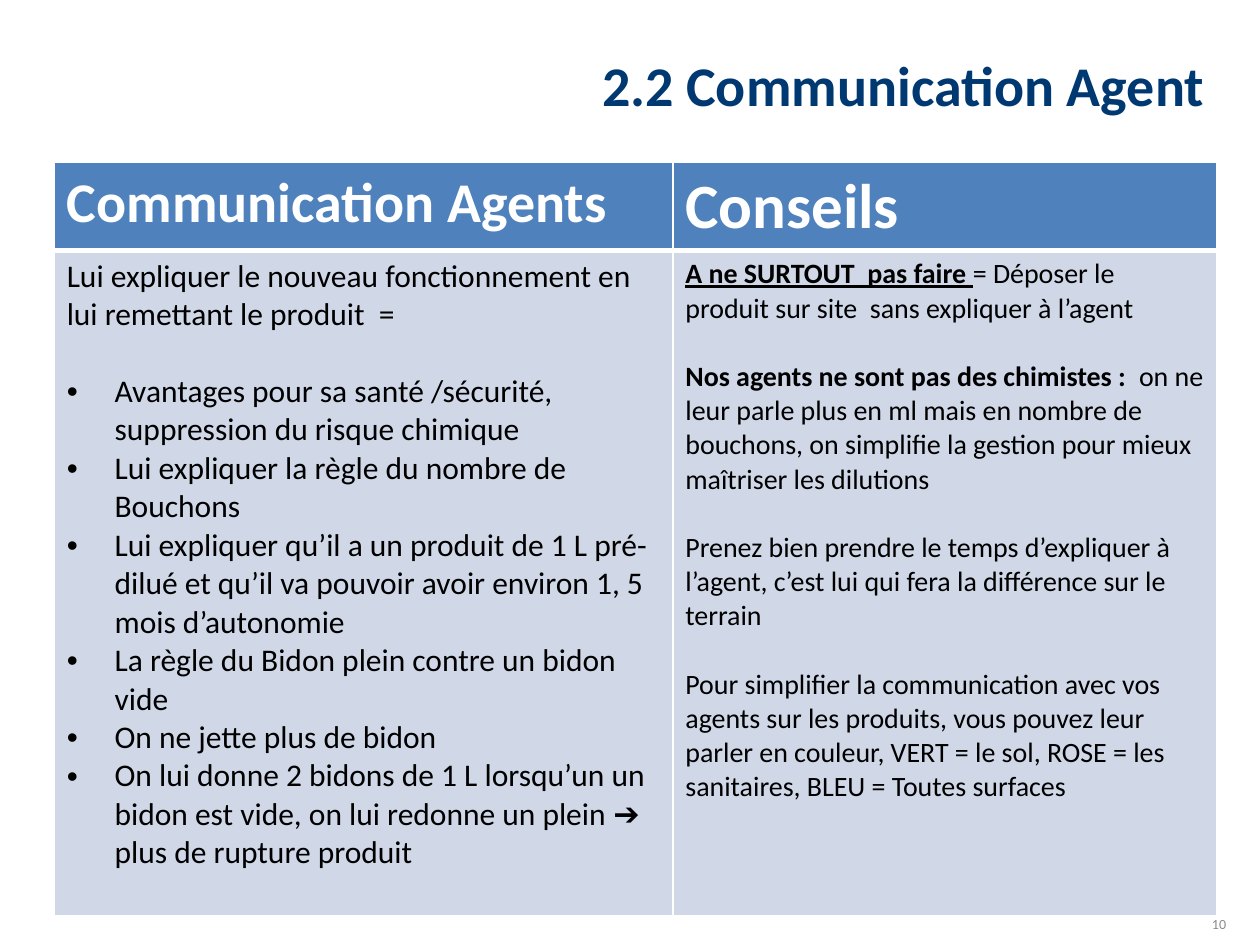
from lxml import etree
from pptx import Presentation
from pptx import util as u
from pptx.dml.color import RGBColor
from pptx.enum import text
from pptx.oxml import ns

COLORS = {"title": "003871", "number": "8C8C8C", "header": "4F81BD",
          "body": "D0D8E8", "white": "FFFFFF", "black": "000000"}

HEADERS = [("Communication Agents", 32), ("Conseils", 36)]
INTRO = "Lui expliquer le nouveau fonctionnement en lui remettant le produit  ="
AGENT_POINTS = [
    "Avantages pour sa santé /sécurité, suppression du risque chimique",
    "Lui expliquer la règle du nombre de Bouchons",
    "Lui expliquer qu’il a un produit de 1 L pré-dilué et qu’il va pouvoir "
    "avoir environ 1, 5 mois d’autonomie",
    "La règle du Bidon plein contre un bidon vide",
    "On ne jette plus de bidon",
    "On lui donne 2 bidons de 1 L lorsqu’un un bidon est vide, on lui redonne "
    "un plein ➔ plus de rupture produit",
]
# Each piece of advice: bold lead, underlined lead, plain text
ADVICE = [
    ("A ne SURTOUT  pas faire ", True,
     "= Déposer le produit sur site  sans expliquer à l’agent"),
    ("Nos agents ne sont pas des chimistes :  ", False,
     "on ne leur parle plus en ml mais en nombre de bouchons, on simplifie "
     "la gestion pour mieux maîtriser les dilutions"),
    ("", False,
     "Prenez bien prendre le temps d’expliquer à l’agent, c’est lui qui fera "
     "la différence sur le terrain"),
    ("", False,
     "Pour simplifier la communication avec vos agents sur les produits, vous "
     "pouvez leur parler en couleur, VERT = le sol, ROSE = les sanitaires, "
     "BLEU = Toutes surfaces"),
]


class SlideBuilder:
    font_name = "Calibri"

    def __init__(self, slide):
        self.slide = slide

    def style(self, paragraph, size, color, bold=None):
        font = paragraph.font
        font.name, font.size, font.bold = self.font_name, u.Pt(size), bold
        font.color.rgb = RGBColor.from_string(COLORS[color])

    def right_text(self, words, box, size, color, bold=False,
                   anchor=text.MSO_ANCHOR.TOP):
        shape = self.slide.shapes.add_textbox(*map(u.Inches, box))
        frame = shape.text_frame
        frame.word_wrap = True
        frame.vertical_anchor = anchor
        paragraph = frame.paragraphs[0]
        paragraph.text = words
        paragraph.alignment = text.PP_ALIGN.RIGHT
        self.style(paragraph, size, color, bold)

    def table(self, left, top, widths, heights):
        frame = self.slide.shapes.add_table(
            len(heights), len(widths), u.Inches(left), u.Inches(top),
            u.Inches(sum(widths)), u.Inches(sum(heights)))
        table = frame.table
        for column, width in zip(table.columns, widths):
            column.width = u.Inches(width)
        for row, height in zip(table.rows, heights):
            row.height = u.Inches(height)
        return table

    def cell(self, cell, fill, borders):
        """Borders give the line widths in points: left, right, top, bottom."""
        properties = cell._tc.get_or_add_tcPr()
        for side, width in zip("LRTB", borders):
            line = etree.SubElement(properties, ns.qn(f"a:ln{side}"), w=str(u.Pt(width)))
            solid = etree.SubElement(line, ns.qn("a:solidFill"))
            etree.SubElement(solid, ns.qn("a:srgbClr"), val=COLORS["white"])
        cell.fill.solid()
        cell.fill.fore_color.rgb = RGBColor.from_string(COLORS[fill])

    def paragraph(self, cell, runs, size, color="black", bold=None, before=0,
                  bullet=False):
        """Runs are (words, bold, underlined); the first fills the empty paragraph."""
        frame = cell.text_frame
        paragraph = frame.paragraphs[0]
        if paragraph.runs:
            paragraph = frame.add_paragraph()
        if before:
            paragraph.space_before = u.Pt(before)
        if bullet:
            properties = paragraph._p.get_or_add_pPr()
            indent = u.Inches(0.38)
            properties.set("marL", str(indent))
            properties.set("indent", str(-indent))
            etree.SubElement(properties, ns.qn("a:buFont"), typeface="Arial")
            etree.SubElement(properties, ns.qn("a:buChar"), char="•")
        self.style(paragraph, size, color, bold)
        for words, run_bold, underlined in runs:
            run = paragraph.add_run()
            run.text = words
            run.font.bold = run_bold
            run.font.underline = underlined


def main():
    presentation = Presentation()
    presentation.slide_width, presentation.slide_height = u.Inches(10), u.Inches(7.5)
    builder = SlideBuilder(presentation.slides.add_slide(presentation.slide_layouts[6]))

    builder.right_text("2.2 Communication Agent", (0.66, 0.29, 9, 0.76), 32,
                       "title", True, text.MSO_ANCHOR.MIDDLE)
    table = builder.table(0.43, 1.29, (4.91, 4.32), (0.7, 5.28))
    for column, (heading, size) in enumerate(HEADERS):
        header, body = table.cell(0, column), table.cell(1, column)
        builder.cell(header, "header", (1, 1, 1, 3))
        builder.cell(body, "body", (1, 1, 3, 1))
        builder.paragraph(header, [(heading, True, None)], size, "white", True)

    agents, advice = table.cell(1, 0), table.cell(1, 1)
    builder.paragraph(agents, [(INTRO, False, None)], 18)
    for index, point in enumerate(AGENT_POINTS):
        builder.paragraph(agents, [(point, False, None)], 18,
                          before=0 if index else 22, bullet=True)
    for index, (lead, underlined, words) in enumerate(ADVICE):
        runs = [(lead, True, underlined)] if lead else []
        builder.paragraph(advice, runs + [(words, False, None)], 16,
                          before=19.5 if index else 0)

    builder.right_text("10", (9.08, 7.22, 0.75, 0.2), 8, "number")
    presentation.save("out.pptx")


if __name__ == "__main__":
    main()
